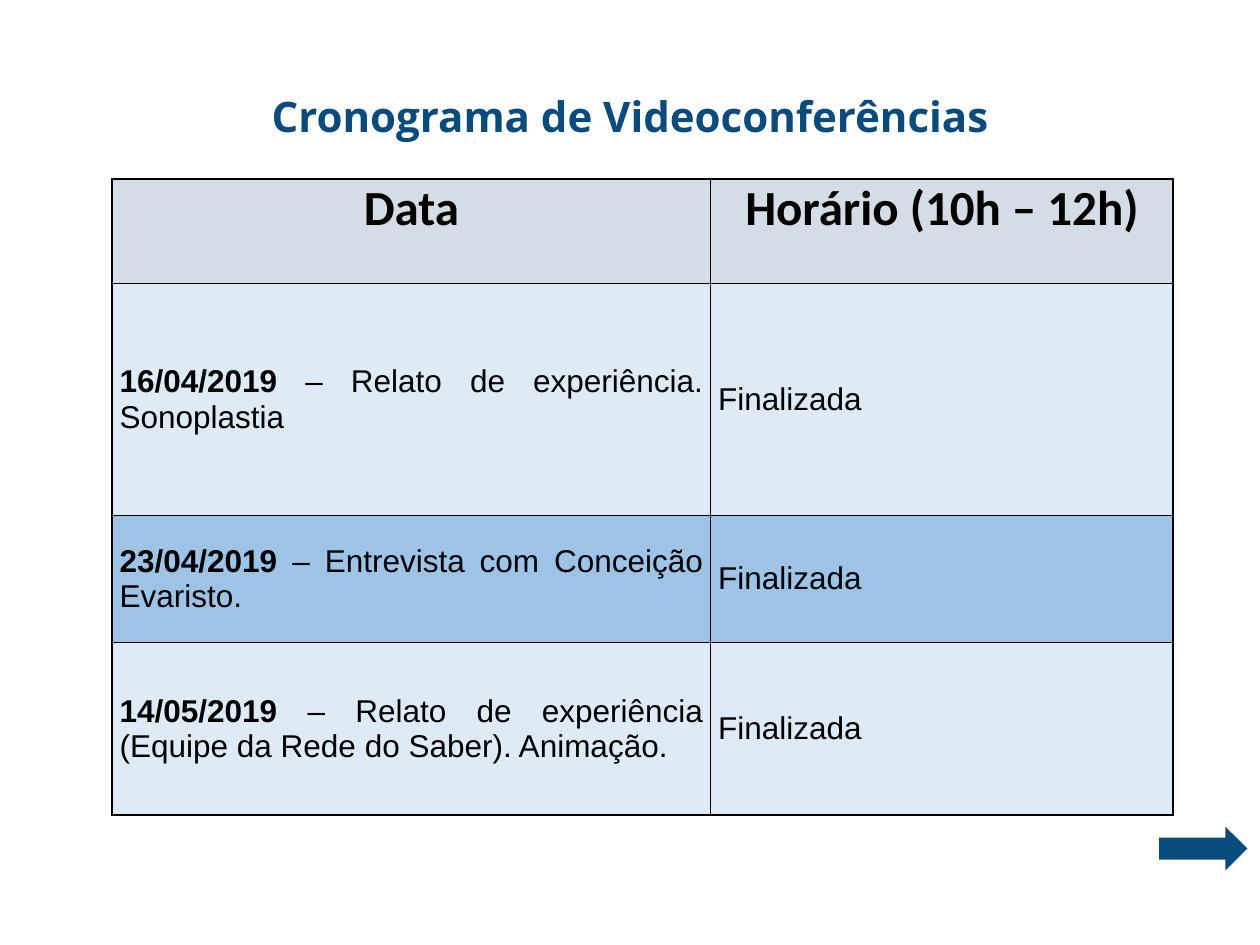
from dataclasses import dataclass

from lxml import etree
from pptx import Presentation, util as u
from pptx.dml.color import RGBColor
from pptx.enum import shapes, text
from pptx.oxml.ns import qn

WIDE, HIGH = 10, 7.5
COLS = (4.75, 3.67)
HEAD = ("Data", "Horário (10h – 12h)")
HUES = {
    "navy": "094B7D",
    "black": "000000",
    "head": "D6DCE5",
    "pale": "DEEBF7",
    "mid": "9DC3E6",
}


@dataclass
class Event:
    date: str
    topic: str
    state: str
    high: float
    hue: str


EVENTS = [
    Event("16/04/2019", "Relato de experiência. Sonoplastia",
          "Finalizada", 1.84, "pale"),
    Event("23/04/2019", "Entrevista com Conceição Evaristo.",
          "Finalizada", 1.01, "mid"),
    Event("14/05/2019",
          "Relato de experiência (Equipe da Rede do Saber). Animação.",
          "Finalizada", 1.37, "pale"),
]
ROWS = (0.83, *(event.high for event in EVENTS))


def tint(name: str) -> RGBColor:
    return RGBColor.from_string(HUES[name])


def style(para, face: str, size: float, hue: str, align) -> None:
    para.alignment = align
    para.font.name = face
    para.font.size = u.Pt(size)
    para.font.color.rgb = tint(hue)


def edge(cell) -> None:
    """Draw a 1 pt black line on all four sides of a cell."""
    props = cell._tc.get_or_add_tcPr()
    for spot, side in enumerate(("lnL", "lnR", "lnT", "lnB")):
        line = etree.Element(qn(f"a:{side}"), w=str(u.Pt(1)))
        fill = etree.SubElement(line, qn("a:solidFill"))
        etree.SubElement(fill, qn("a:srgbClr"), val=HUES["black"])
        props.insert(spot, line)


def dress(cell, hue: str, anchor):
    """Set fill, margins and borders; return the cell's paragraph."""
    cell.fill.solid()
    cell.fill.fore_color.rgb = tint(hue)
    cell.margin_left = cell.margin_right = u.Inches(0.06)
    cell.margin_top = cell.margin_bottom = 0
    cell.vertical_anchor = anchor
    edge(cell)
    return cell.text_frame.paragraphs[0]


def title(slide) -> None:
    box = slide.shapes.add_textbox(
        u.Inches(0.69), u.Inches(0.22), u.Inches(8.62), u.Inches(1.45))
    frame = box.text_frame
    frame.word_wrap = True
    frame.vertical_anchor = text.MSO_ANCHOR.MIDDLE
    para = frame.paragraphs[0]
    para.text = "Cronograma de Videoconferências"
    para.line_spacing = 0.9
    style(para, "Open Sans", 24, "navy", text.PP_ALIGN.CENTER)
    para.font.bold = True


def agenda(slide) -> None:
    table = slide.shapes.add_table(
        len(ROWS), len(COLS), u.Inches(0.89), u.Inches(1.42),
        u.Inches(sum(COLS)), u.Inches(sum(ROWS))).table
    table.first_row = table.horz_banding = False
    for col, wide in zip(table.columns, COLS):
        col.width = u.Inches(wide)
    for row, high in zip(table.rows, ROWS):
        row.height = u.Inches(high)

    # Header row
    for col, label in enumerate(HEAD):
        para = dress(table.cell(0, col), "head", text.MSO_ANCHOR.TOP)
        para.text = label
        style(para, "Calibri", 28, "black", text.PP_ALIGN.CENTER)
        para.font.bold = True

    # One row per event: bold date with topic, then state
    for row, event in enumerate(EVENTS, 1):
        parts = ([(event.date, True), (f" – {event.topic}", False)],
                 [(event.state, False)])
        for col, runs in enumerate(parts):
            para = dress(table.cell(row, col), event.hue,
                         text.MSO_ANCHOR.MIDDLE)
            for words, bold in runs:
                run = para.add_run()
                run.text = words
                run.font.bold = bold
            style(para, "Arial", 18, "black", text.PP_ALIGN.JUSTIFY)


def arrow(slide) -> None:
    shape = slide.shapes.add_shape(
        shapes.MSO_SHAPE.RIGHT_ARROW, u.Inches(9.2), u.Inches(6.56),
        u.Inches(0.7), u.Inches(0.35))
    shape.shadow.inherit = False
    shape.fill.solid()
    shape.fill.fore_color.rgb = tint("navy")
    shape.line.fill.background()


def main() -> None:
    deck = Presentation()
    deck.slide_width, deck.slide_height = u.Inches(WIDE), u.Inches(HIGH)
    slide = deck.slides.add_slide(deck.slide_layouts[6])
    title(slide)
    agenda(slide)
    arrow(slide)
    deck.save("out.pptx")


if __name__ == "__main__":
    main()
